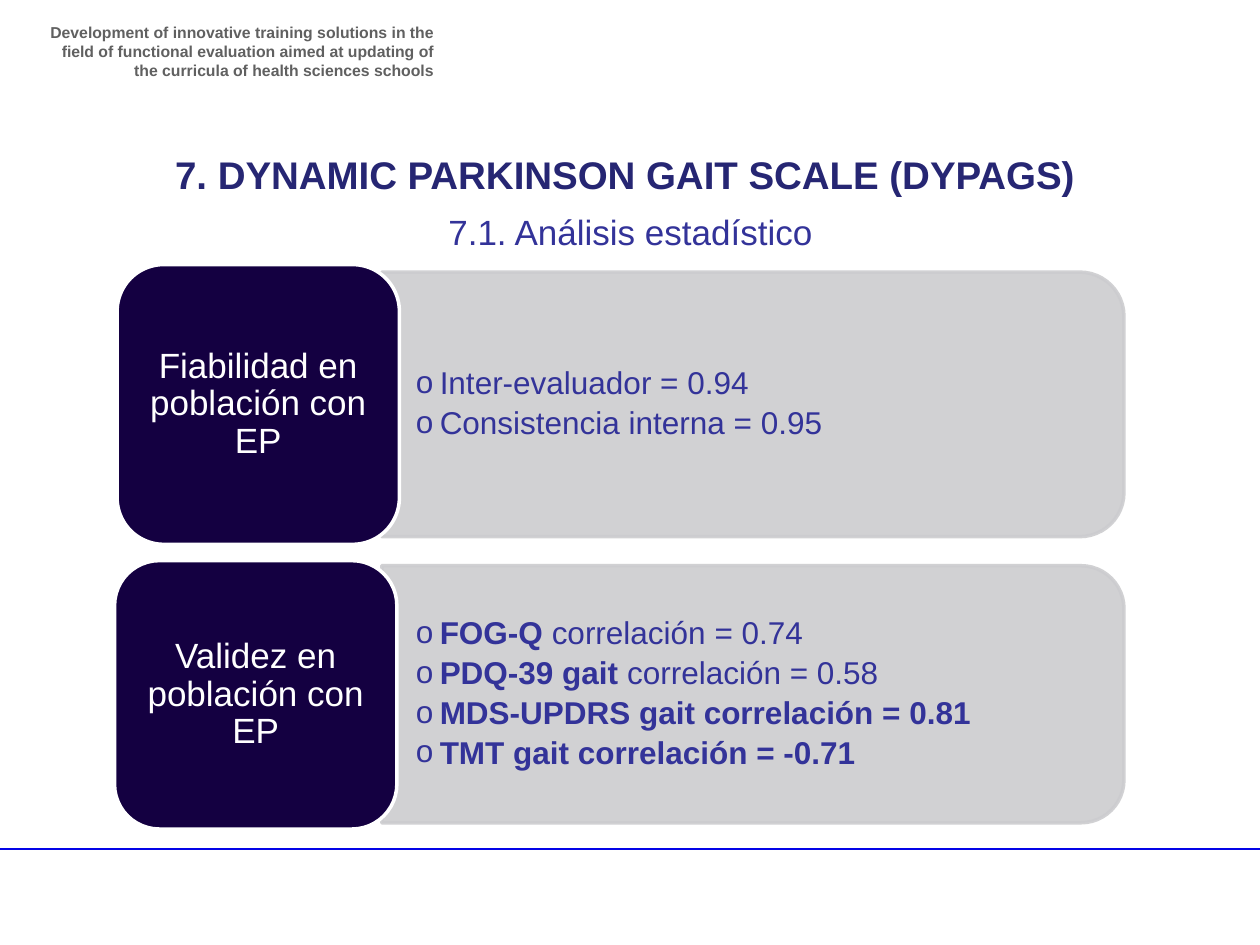
from lxml.etree import SubElement
from pptx import Presentation
from pptx.dml.color import RGBColor
from pptx.enum.shapes import MSO_CONNECTOR, MSO_SHAPE
from pptx.enum.text import MSO_ANCHOR, PP_ALIGN
from pptx.oxml.ns import qn
from pptx.util import Inches, Pt

COLORS = {
    "rule": "0404E6",
    "header": "606060",
    "title": "262673",
    "body": "333399",
    "label": "140041",
    "panel": "CCCCCF",
    "white": "FFFFFF",
}
PANEL_OPACITY = 90


def rgb(name):
    return RGBColor.from_string(COLORS[name])


def add_text_frame(slide, box, insets=(0.1, 0.05), anchor=MSO_ANCHOR.TOP):
    frame = slide.shapes.add_textbox(*map(Inches, box)).text_frame
    frame.word_wrap = True
    frame.vertical_anchor = anchor
    frame.margin_left = frame.margin_right = Inches(insets[0])
    frame.margin_top = frame.margin_bottom = Inches(insets[1])
    return frame


def add_run(paragraph, text, size, color, bold=False):
    run = paragraph.add_run()
    run.text = text
    run.font.name = "Arial"
    run.font.size = Pt(size)
    run.font.bold = bold
    run.font.color.rgb = rgb(color)


def add_line_of_text(slide, box, text, size, color, bold=False, align=PP_ALIGN.LEFT):
    paragraph = add_text_frame(slide, box).paragraphs[0]
    paragraph.alignment = align
    add_run(paragraph, text, size, color, bold)


def add_filled_shape(slide, kind, box, fill, outline):
    shape = slide.shapes.add_shape(kind, *map(Inches, box))
    shape.shadow.inherit = False
    shape.fill.solid()
    shape.fill.fore_color.rgb = rgb(fill)
    shape.line.color.rgb = rgb(outline)
    shape.line.width = Pt(2)
    return shape


def add_footer_rule(slide, left, right, y):
    rule = slide.shapes.add_connector(
        MSO_CONNECTOR.STRAIGHT, Inches(left), Inches(y), Inches(right), Inches(y))
    rule.line.color.rgb = rgb("rule")
    rule.line.width = Pt(1)
    SubElement(rule.element.spPr, qn("a:effectLst"))


def set_bullet(paragraph):
    properties = paragraph._p.get_or_add_pPr()
    properties.set("marL", str(Inches(0.19)))
    properties.set("indent", str(-Inches(0.19)))
    SubElement(properties, qn("a:buFont"), typeface="Arial")
    SubElement(properties, qn("a:buChar"), char="o")


def add_findings_panel(slide, box, findings):
    """Panel rounded on its right side: a top-rounded shape turned by 90 degrees."""
    left, top, width, height = box
    turned_box = (left + (width - height) / 2, top + (height - width) / 2, height, width)
    panel = add_filled_shape(
        slide, MSO_SHAPE.ROUND_2_SAME_RECTANGLE, turned_box, "panel", "panel")
    panel.rotation = 90
    for color in panel.element.spPr.iter(qn("a:srgbClr")):
        SubElement(color, qn("a:alpha"), val=str(PANEL_OPACITY * 1000))

    text_box = (left, top + 0.1, width - 0.1, height - 0.2)
    frame = add_text_frame(slide, text_box, (0.27, 0.14), MSO_ANCHOR.MIDDLE)
    for index, (bold_part, plain_part) in enumerate(findings):
        paragraph = frame.add_paragraph() if index else frame.paragraphs[0]
        paragraph.level = 1
        paragraph.line_spacing = 0.9
        paragraph.space_after = Pt(3.25)
        set_bullet(paragraph)
        if bold_part:
            add_run(paragraph, bold_part, 18, "body", bold=True)
        if plain_part:
            add_run(paragraph, plain_part, 18, "body")


def add_label(slide, box, text):
    add_filled_shape(slide, MSO_SHAPE.ROUNDED_RECTANGLE, box, "label", "white")
    left, top, width, height = box
    text_box = (left + 0.1, top + 0.1, width - 0.2, height - 0.2)
    frame = add_text_frame(slide, text_box, (0.08, 0.04), MSO_ANCHOR.MIDDLE)
    paragraph = frame.paragraphs[0]
    paragraph.alignment = PP_ALIGN.CENTER
    paragraph.line_spacing = 0.9
    paragraph.space_after = Pt(8.4)
    add_run(paragraph, text, 20, "white")


def main():
    presentation = Presentation()
    presentation.slide_width = Inches(10)
    presentation.slide_height = Inches(7.5)
    slide = presentation.slides.add_slide(presentation.slide_layouts[6])

    add_footer_rule(slide, -0.05, 10, 6.74)
    add_line_of_text(
        slide, (0.28, 0.13, 3.26, 0.47),
        "Development of innovative training solutions in the ﬁeld of functional "
        "evaluation aimed at updating of the curricula of health sciences schools",
        9, "header", bold=True, align=PP_ALIGN.RIGHT)
    add_line_of_text(
        slide, (0.67, 1.15, 8.58, 0.47), "7. DYNAMIC PARKINSON GAIT SCALE (DYPAGS)",
        22, "title", bold=True, align=PP_ALIGN.CENTER)

    sections = [
        ("Fiabilidad en población con EP", (0.93, 2.1, 2.24, 2.22), (3.03, 2.16, 5.89, 2.1),
         [("", "Inter-evaluador = 0.94"), ("", "Consistencia interna = 0.95")]),
        ("Validez en población con EP", (0.91, 4.45, 2.24, 2.13), (3.03, 4.49, 5.89, 2.04),
         [("FOG-Q ", "correlación = 0.74"),
          ("PDQ-39 gait ", "correlación = 0.58"),
          ("MDS-UPDRS gait correlación = 0.81", ""),
          ("TMT gait correlación = -0.71", "")]),
    ]
    for label, label_box, panel_box, findings in sections:
        add_findings_panel(slide, panel_box, findings)
        add_label(slide, label_box, label)

    add_line_of_text(
        slide, (3.46, 1.62, 3.11, 0.77), "7.1. Análisis estadístico", 20, "body")
    presentation.save("out.pptx")


if __name__ == "__main__":
    main()
